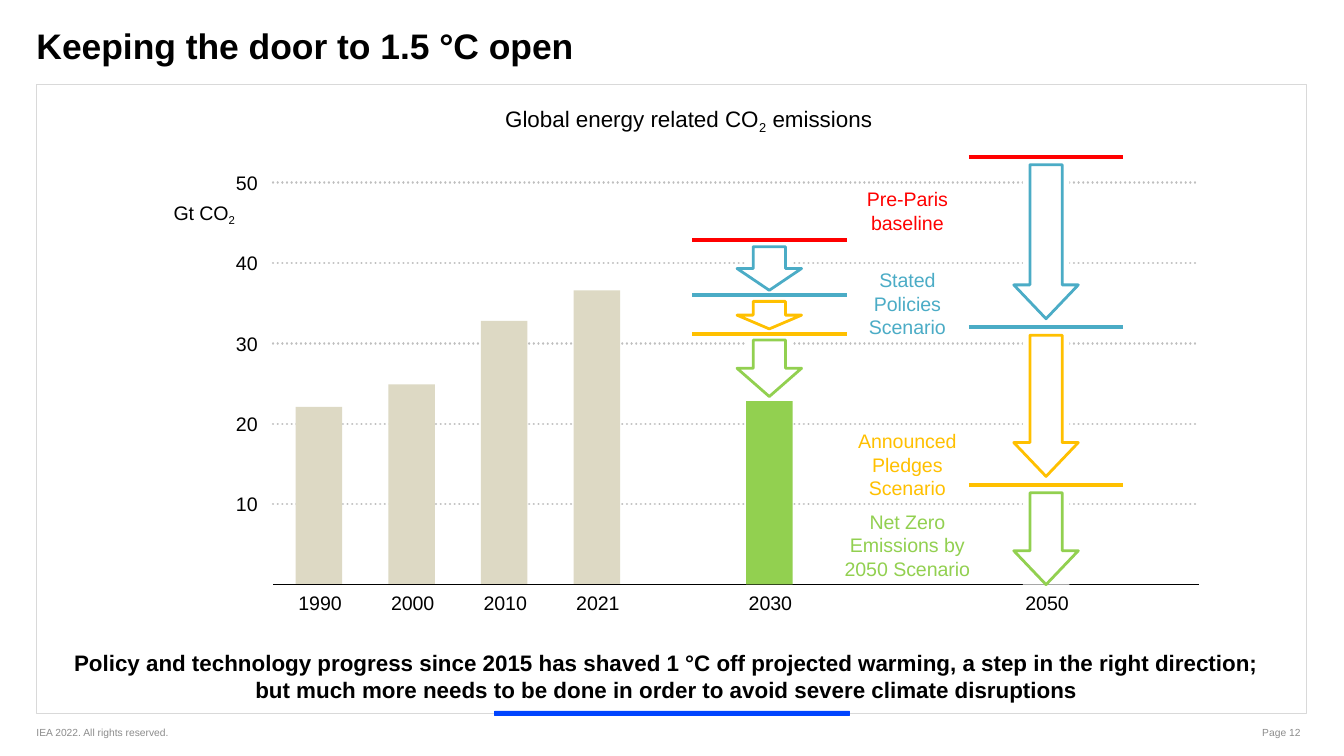
"""Build the slide on emission levels and scenario gaps to 2050."""
import pptx
import pptx.dml.color
import pptx.enum.dml
import pptx.enum.shapes
import pptx.enum.text
import pptx.oxml
import pptx.oxml.ns
import pptx.util

Cm, Pt = pptx.util.Cm, pptx.util.Pt
RGB = pptx.dml.color.RGBColor
ALIGN = pptx.enum.text.PP_ALIGN
ANCHOR = pptx.enum.text.MSO_ANCHOR
SHAPE = pptx.enum.shapes.MSO_SHAPE
STRAIGHT = pptx.enum.shapes.MSO_CONNECTOR.STRAIGHT
DOTTED = pptx.enum.dml.MSO_LINE.ROUND_DOT

BLACK = RGB(0x00, 0x00, 0x00)
WHITE = RGB(0xFF, 0xFF, 0xFF)
GREY = RGB(0x8C, 0x8C, 0x8C)
FRAME_GREY = RGB(0xD9, 0xD9, 0xD9)
GRID_GREY = RGB(0xBF, 0xBF, 0xBF)
ACCENT_BLUE = RGB(0x00, 0x44, 0xFF)
SAND = RGB(0xDD, 0xD9, 0xC4)
RED = RGB(0xFF, 0x00, 0x00)
TEAL = RGB(0x4B, 0xAC, 0xC6)
AMBER = RGB(0xFF, 0xC0, 0x00)
GREEN = RGB(0x92, 0xD0, 0x50)

HEADLINE = "Keeping the door to 1.5 °C open"
CHART_TITLE = ("Global energy related CO", "2", " emissions")
UNIT = ("Gt CO", "2")
TAKEAWAY = [
    ("Policy and technology progress since 2015 has shaved 1 °C off projected "
     "warming, a step in the right direction;",),
    ("but much more needs to be done in order to avoid severe climate disruptions",),
]
COPYRIGHT = "IEA 2022. All rights reserved."
PAGE = "Page 12"
TICKS = [10, 20, 30, 40, 50]
HISTORY = [("1990", 22.1), ("2000", 24.9), ("2010", 32.8), ("2021", 36.6)]
SCENARIO_COLORS = [RED, TEAL, AMBER, GREEN]
OUTLOOK = [
    {"year": "2030", "center": 14.54, "levels": [42.8, 36, 31.2, 22.8],
     "gap_above": 0.12, "gap_below": 0.09},
    {"year": "2050", "center": 19.77, "levels": [53.2, 32, 12.4, 0],
     "gap_above": 0.15, "gap_below": 0.16},
]
SCENARIO_LABELS = [
    (3.98, RED, ["Pre-Paris", "baseline"]),
    (5.74, TEAL, ["Stated", "Policies", "Scenario"]),
    (8.78, AMBER, ["Announced", "Pledges", "Scenario"]),
    (10.3, GREEN, ["Net Zero", "Emissions by", "2050 Scenario"]),
]

MARGIN, CONTENT_WIDTH = 0.69, 24
AXIS_LEFT, AXIS_RIGHT, AXIS_Y = 5.16, 22.66, 11.05
CM_PER_GT = 7.6 / 50
BAR_WIDTH, FIRST_BAR, BAR_STEP = 0.88, 6.03, 1.75
LEVEL_WIDTH, ARROW_WIDTH, ARROW_HEAD = 2.92, 1.22, 0.64
LABEL_CENTER, LABEL_WIDTH, LABEL_HEIGHT = 17.15, 2.8, 1.5
TICK_LEFT, TICK_WIDTH, LINE_HEIGHT, YEAR_TOP = 3.87, 1, 0.46, 11.17

deck = pptx.Presentation()
deck.slide_width, deck.slide_height = Cm(25.4), Cm(14.29)
slide = deck.slides.add_slide(deck.slide_layouts[6])


def height_of(value):
    return AXIS_Y - value * CM_PER_GT


def apply(target, formats):
    for name, value in formats.items():
        setattr(target, name, value)


def add_text(left, top, width, height, paragraphs, size=10.5, color=BLACK, bold=False,
             align=ALIGN.LEFT, anchor=ANCHOR.MIDDLE, wrap=True):
    frame = slide.shapes.add_textbox(Cm(left), Cm(top), Cm(width), Cm(height)).text_frame
    apply(frame, {"margin_left": 0, "margin_top": 0, "margin_right": 0, "margin_bottom": 0,
                  "word_wrap": wrap, "vertical_anchor": anchor})
    for index, pieces in enumerate(paragraphs):
        paragraph = frame.paragraphs[0] if index == 0 else frame.add_paragraph()
        paragraph.alignment = align
        for position, piece in enumerate(pieces):
            run = paragraph.add_run()
            run.text = piece
            apply(run.font, {"name": "Arial", "size": Pt(size), "bold": bold})
            run.font.color.rgb = color
            if position % 2:
                run._r.get_or_add_rPr().set("baseline", "-25000")


def add_block(kind, left, top, width, height, fill=None, outline=None, weight=0.75):
    block = slide.shapes.add_shape(kind, Cm(left), Cm(top), Cm(width), Cm(height))
    block.shadow.inherit = False
    if fill is None:
        block.fill.background()
    else:
        block.fill.solid()
        block.fill.fore_color.rgb = fill
    if outline is None:
        block.line.fill.background()
    else:
        block.line.color.rgb = outline
        block.line.width = Pt(weight)
    return block


def add_level(left, right, y, color, weight, dash=None):
    level = slide.shapes.add_connector(STRAIGHT, Cm(left), Cm(y), Cm(right), Cm(y))
    level.line.color.rgb = color
    apply(level.line, {"width": Pt(weight), "dash_style": dash})
    if dash:
        level._element.spPr.find(pptx.oxml.ns.qn("a:ln")).set("cap", "rnd")
    level._element.spPr.append(pptx.oxml.parse_xml(
        f"<a:effectLst {pptx.oxml.ns.nsdecls('a')}/>"))


def add_bar(center, top, bottom, fill):
    add_block(SHAPE.RECTANGLE, center - BAR_WIDTH / 2, top, BAR_WIDTH, bottom - top, fill)


def add_year(center, year):
    add_text(center - 0.4, YEAR_TOP, 0.84, LINE_HEIGHT, [(year,)],
             align=ALIGN.CENTER, wrap=False)


def add_arrow(center, top, bottom, color):
    height = bottom - top
    arrow = add_block(SHAPE.DOWN_ARROW, center - ARROW_WIDTH / 2, top, ARROW_WIDTH, height,
                      WHITE, color, 1.5)
    arrow.adjustments[0] = 0.5
    arrow.adjustments[1] = min(height / 2, ARROW_HEAD) / min(ARROW_WIDTH, height)


def add_outlook(year, center, levels, gap_above, gap_below):
    heights = [height_of(level) for level in levels]
    steps = list(zip(heights, heights[1:], SCENARIO_COLORS[1:]))
    for upper, lower, _ in steps:
        add_bar(center, upper, lower, WHITE)
    if levels[-1]:
        add_bar(center, heights[-1], AXIS_Y, GREEN)
    for upper, lower, color in steps:
        add_arrow(center, upper + gap_above, lower - (gap_below if lower < AXIS_Y else 0), color)
    for y, color in zip(heights[:-1], SCENARIO_COLORS):
        add_level(center - LEVEL_WIDTH / 2, center + LEVEL_WIDTH / 2, y, color, 2.25)
    add_year(center, year)


add_text(MARGIN, 13.59, 3.38, 0.51, [(COPYRIGHT,)], 5.5, GREY)
add_text(21.2, 13.59, 3.38, 0.51, [(PAGE,)], 5.5, GREY, align=ALIGN.RIGHT)
add_block(SHAPE.RECTANGLE, MARGIN, 1.6, CONTENT_WIDTH, 11.89, outline=FRAME_GREY)
add_block(SHAPE.RECTANGLE, 9.35, 13.44, 6.71, 0.08, ACCENT_BLUE, ACCENT_BLUE, 0.5)
add_text(MARGIN, 0.46, 22.2, 1.09, [(HEADLINE,)], 19, bold=True, anchor=ANCHOR.TOP)
add_text(1.14, 1.98, 23.75, 0.6, [CHART_TITLE], 12, align=ALIGN.CENTER, anchor=ANCHOR.TOP)

for tick in TICKS:
    y = height_of(tick)
    add_level(AXIS_LEFT, AXIS_RIGHT, y, GRID_GREY, 1.25, DOTTED)
    add_text(TICK_LEFT, y - LINE_HEIGHT / 2, TICK_WIDTH, LINE_HEIGHT, [(str(tick),)],
             align=ALIGN.RIGHT)
add_text(3.28, 3.79, 1.25, LINE_HEIGHT, [UNIT], anchor=ANCHOR.TOP, wrap=False)

for index, (year, emissions) in enumerate(HISTORY):
    center = FIRST_BAR + index * BAR_STEP
    add_bar(center, height_of(emissions), AXIS_Y, SAND)
    add_year(center, year)
add_level(AXIS_LEFT, AXIS_RIGHT, AXIS_Y, BLACK, 0.25)

for outlook in OUTLOOK:
    add_outlook(**outlook)
for middle, color, words in SCENARIO_LABELS:
    add_text(LABEL_CENTER - LABEL_WIDTH / 2, middle - LABEL_HEIGHT / 2, LABEL_WIDTH,
             LABEL_HEIGHT, [(word,) for word in words], color=color,
             align=ALIGN.CENTER, wrap=False)

add_text(MARGIN, 12.17, 23.82, 1.22, TAKEAWAY, 12, bold=True, align=ALIGN.CENTER)
deck.save("out.pptx")
